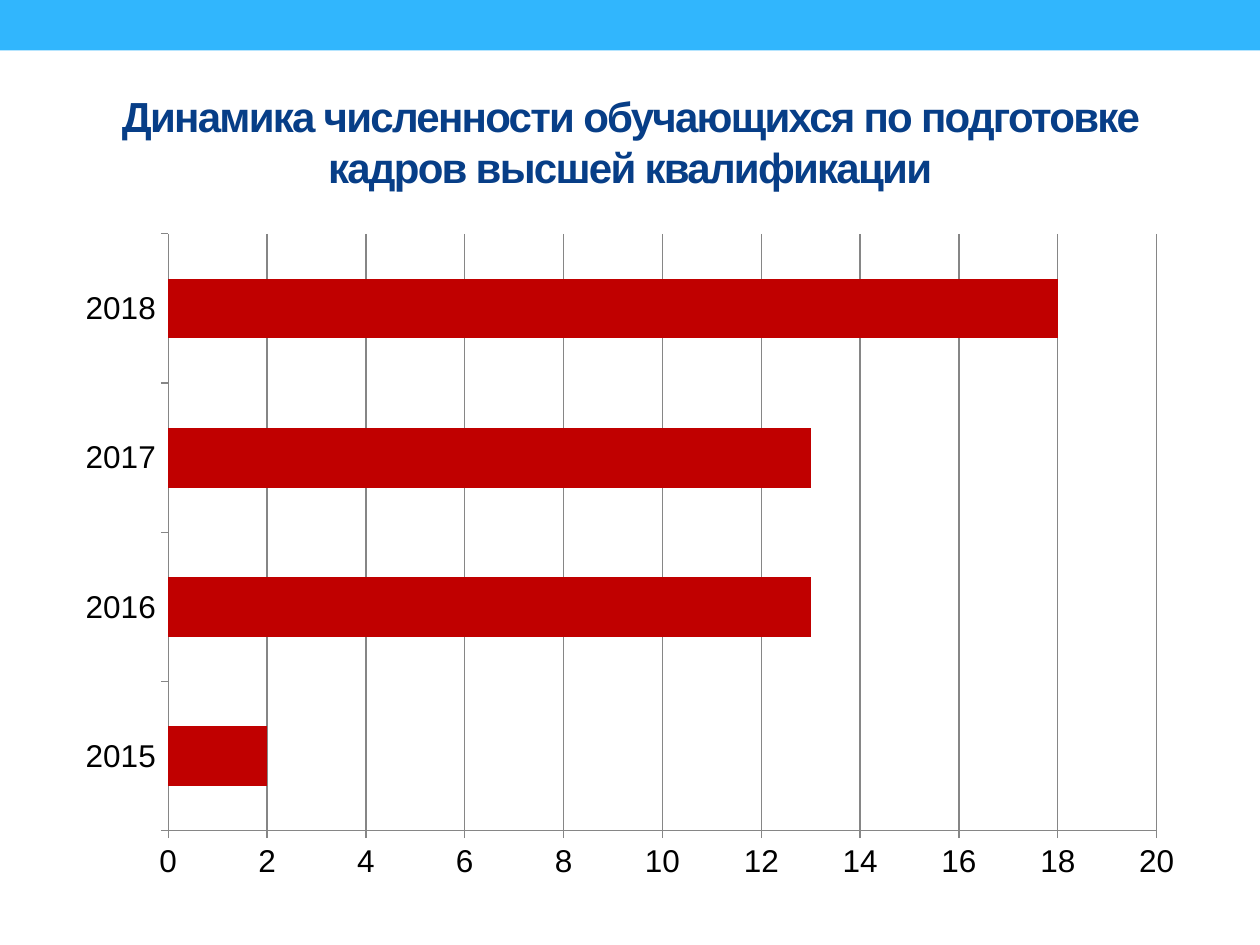
from pptx import Presentation
from pptx.chart.data import CategoryChartData
from pptx.dml.color import RGBColor
from pptx.enum.chart import XL_CHART_TYPE, XL_TICK_MARK
from pptx.enum.shapes import MSO_SHAPE
from pptx.enum.text import MSO_ANCHOR, MSO_AUTO_SIZE, PP_ALIGN
from pptx.util import Inches, Pt

TITLE = "Динамика численности обучающихся по подготовке кадров высшей квалификации"
STUDENTS = {"2015": 2, "2016": 13, "2017": 13, "2018": 18}
FONT = "Arial"
BAND, NAVY, RED, GREY, BLACK = "31B6FD", "073E87", "C00000", "868686", "000000"
MARGIN, CONTENT_WIDTH = 0.5, 9


def paint(color_format, color):
    """Set a color format from a hex string."""
    color_format.rgb = RGBColor.from_string(color)


def style_font(font, size, color, bold=False):
    """Apply the slide's typeface, size, color and weight."""
    font.name, font.size, font.bold = FONT, Pt(size), bold
    paint(font.color, color)


def add_band(slide):
    """Add the colored band along the top edge."""
    band = slide.shapes.add_shape(MSO_SHAPE.RECTANGLE, 0, 0, Inches(10), Inches(0.4))
    band.shadow.inherit = False
    band.fill.solid()
    paint(band.fill.fore_color, BAND)
    band.line.fill.background()


def add_title(slide):
    """Fill and format the title placeholder."""
    title = slide.shapes.title
    title.left, title.top = Inches(MARGIN), Inches(0.58)
    title.width, title.height = Inches(CONTENT_WIDTH), Inches(1.08)
    frame = title.text_frame
    frame.word_wrap = True
    frame.auto_size = MSO_AUTO_SIZE.NONE
    frame.vertical_anchor = MSO_ANCHOR.MIDDLE
    paragraph = frame.paragraphs[0]
    paragraph.alignment = PP_ALIGN.CENTER
    run = paragraph.add_run()
    run.text = TITLE
    style_font(run.font, 24, NAVY, bold=True)
    run.font._element.set("spc", "-100")


def add_students_chart(slide):
    """Add the bar chart of student numbers by year."""
    data = CategoryChartData()
    data.categories = list(STUDENTS)
    data.add_series("Series 1", list(STUDENTS.values()))
    chart = slide.shapes.add_chart(
        XL_CHART_TYPE.BAR_CLUSTERED, Inches(MARGIN), Inches(1.75),
        Inches(CONTENT_WIDTH), Inches(5.33), data).chart
    chart.has_legend = False
    chart.has_title = False
    style_font(chart.font, 18, BLACK)

    plot = chart.plots[0]
    plot.gap_width = 150
    plot.vary_by_categories = False
    fill = plot.series[0].format.fill
    fill.solid()
    paint(fill.fore_color, RED)

    value_axis = chart.value_axis
    value_axis.minimum_scale, value_axis.maximum_scale = 0, 20
    value_axis.major_unit = 2
    value_axis.has_major_gridlines = True
    for axis in (chart.category_axis, value_axis):
        axis.major_tick_mark = XL_TICK_MARK.OUTSIDE
        axis.minor_tick_mark = XL_TICK_MARK.NONE
    for lined in (chart.category_axis, value_axis, value_axis.major_gridlines):
        lined.format.line.width = Pt(0.75)
        paint(lined.format.line.color, GREY)


def main():
    """Build and save the presentation."""
    presentation = Presentation()
    presentation.slide_width, presentation.slide_height = Inches(10), Inches(7.5)
    slide = presentation.slides.add_slide(presentation.slide_layouts[5])
    add_band(slide)
    add_title(slide)
    add_students_chart(slide)
    presentation.save("out.pptx")


if __name__ == "__main__":
    main()
